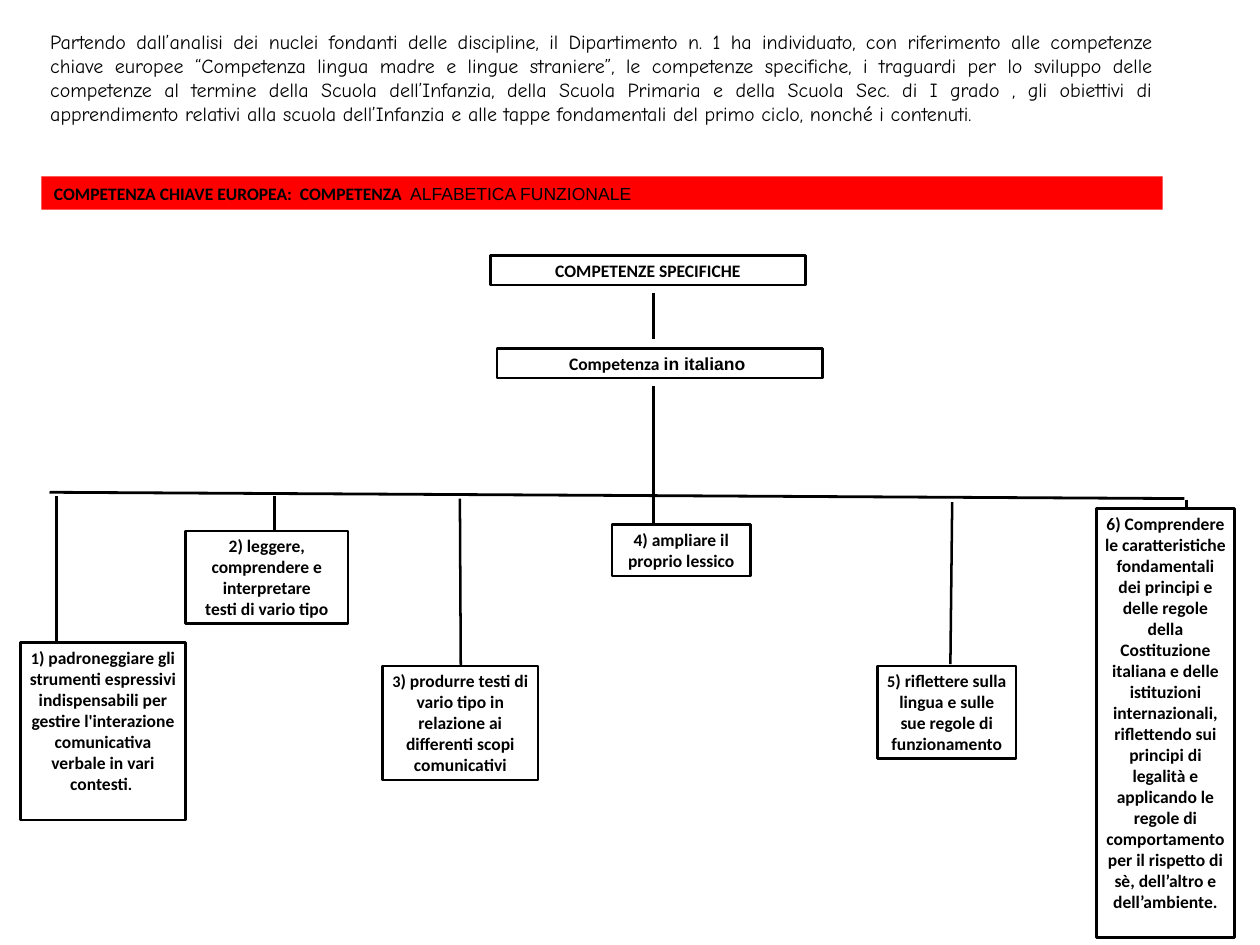
from lxml.etree import SubElement
from pptx import Presentation
from pptx.dml.color import RGBColor
from pptx.enum.shapes import MSO_CONNECTOR as Connector, MSO_SHAPE as Shape
from pptx.enum.text import MSO_ANCHOR as Anchor, PP_ALIGN as Align
from pptx.oxml.ns import qn
from pptx.util import Inches, Pt

BLACK = RGBColor(0, 0, 0)
RED = RGBColor(255, 0, 0)
BODY, ACCENT, INTRO_FONT = "Calibri", "Arial", "Comic Neue"
LEFT, TRUNK = 0.46, 7.26

INTRO = (
    "Partendo dall’analisi dei nuclei fondanti delle discipline, il Dipartimento n. 1 ha "
    "individuato, con riferimento alle competenze chiave europee “Competenza lingua madre e "
    "lingue straniere”, le competenze specifiche, i traguardi per lo sviluppo delle competenze "
    "al termine della Scuola dell’Infanzia, della Scuola Primaria e della Scuola Sec. di I "
    "grado , gli obiettivi di apprendimento relativi alla scuola dell’Infanzia e alle tappe "
    "fondamentali del primo ciclo, nonché i contenuti."
)
HEADINGS = [
    ((5.45, 2.84, 3.5, 0.33), [[("COMPETENZE SPECIFICHE", {})]]),
    ((5.52, 3.87, 3.62, 0.33),
     [[("Competenza ", {}), ("in italiano ", {"name": ACCENT})]]),
]
SMALL = {"size": Pt(13)}
SKILLS = [
    ((0.23, 7.14, 1.83, 1.97), [
        [("1", SMALL), (") padroneggiare gli strumenti espressivi", {})],
        [("indispensabili per gestire l'interazione comunicativa verbale in vari contesti", {}),
         (". ", SMALL)]]),
    ((2.06, 5.9, 1.81, 1.03), [
        [("2) leggere, comprendere e interpretare", {})], [("testi di vario tipo", {})]]),
    ((4.25, 7.4, 1.73, 1.27), [
        [("3", SMALL),
         (") produrre testi di vario tipo in relazione ai differenti scopi comunicativi", {})]]),
    ((6.8, 5.83, 1.54, 0.57), [[("4) ampliare il proprio lessico", {})]]),
    ((9.75, 7.4, 1.54, 1.03), [
        [("5", SMALL),
         (") riflettere sulla lingua e sulle sue regole di funzionamento", {})]]),
]
CITIZENSHIP = (
    "6) Comprendere le caratteristiche fondamentali dei principi e delle regole della "
    "Costituzione italiana e delle istituzioni internazionali, riflettendo sui principi di "
    "legalità e applicando le regole di comportamento per il rispetto di sè, dell’altro e "
    "dell’ambiente."
)
BRANCHES = [
    (0.63, 5.51, 0.63, 7.13),
    (3.05, 5.51, 3.05, 5.9),
    (5.11, 5.54, 5.12, 7.4),
    (TRUNK, 3.25, TRUNK, 3.77),
    (TRUNK, 4.29, TRUNK, 5.82),
    (10.58, 5.58, 10.56, 7.38),
]
THICK_LINES = [(0.55, 5.47, 13.16, 5.54), (13.18, 5.55, 13.18, 5.67)]


def write(frame, paragraphs, align, font=BODY, size=14, bold=True, inset=(0.1, 0.05)):
    """Fill a text frame with paragraphs of (text, font overrides) runs."""
    frame.word_wrap = True
    frame.vertical_anchor = Anchor.TOP
    frame.margin_left = frame.margin_right = Inches(inset[0])
    frame.margin_top = frame.margin_bottom = Inches(inset[1])
    for index, runs in enumerate(paragraphs):
        paragraph = frame.add_paragraph() if index else frame.paragraphs[0]
        paragraph.alignment = align
        paragraph.font.name, paragraph.font.size = font, Pt(size)
        paragraph.font.bold, paragraph.font.color.rgb = bold, BLACK
        for text, overrides in runs:
            run = paragraph.add_run()
            run.text = text
            for attribute, value in overrides.items():
                setattr(run.font, attribute, value)


def add_panel(slide, area, kind=Shape.RECTANGLE):
    """Add a shape without fill, line or shadow."""
    panel = slide.shapes.add_shape(kind, *map(Inches, area))
    panel.shadow.inherit = False
    panel.fill.background()
    panel.line.fill.background()
    return panel


def add_box(slide, area, paragraphs, kind=Shape.RECTANGLE, width=2):
    """Add an outlined box with centred bold text."""
    box = add_panel(slide, area, kind)
    box.line.color.rgb, box.line.width = BLACK, Pt(width)
    write(box.text_frame, paragraphs, Align.CENTER)


def add_line(slide, ends, width=2):
    """Add a straight black line between two points."""
    line = slide.shapes.add_connector(Connector.STRAIGHT, *map(Inches, ends))
    line.line.color.rgb, line.line.width = BLACK, Pt(width)
    SubElement(line._element.spPr, qn("a:effectLst"))


def add_banner(slide):
    """Add the red bar naming the key competence."""
    banner = add_panel(slide, (LEFT, 1.96, 12.46, 0.37))
    banner.fill.solid()
    banner.fill.fore_color.rgb = RED
    label = [("COMPETENZA CHIAVE EUROPEA:  COMPETENZA ", {}),
             (" ALFABETICA FUNZIONALE", {"name": ACCENT, "bold": False})]
    write(banner.text_frame, [label], Align.LEFT, inset=(0.14, 0.07))


def add_intro(slide):
    """Add the justified opening paragraph."""
    intro = slide.shapes.add_textbox(*map(Inches, (LEFT, 0.28, 12.45, 1.43)))
    write(intro.text_frame, [[(INTRO, {})]], Align.JUSTIFY, INTRO_FONT, 16, False)


def main():
    """Build the competence tree and save it."""
    deck = Presentation()
    deck.slide_width, deck.slide_height = Inches(14), Inches(10.5)
    slide = deck.slides.add_slide(deck.slide_layouts[6])
    add_intro(slide)
    add_banner(slide)
    for ends in THICK_LINES:
        add_line(slide, ends, 2.25)
    for ends in BRANCHES:
        add_line(slide, ends)
    for area, paragraphs in HEADINGS + SKILLS:
        add_box(slide, area, paragraphs)
    add_box(slide, (12.18, 5.65, 1.54, 4.77), [[(CITIZENSHIP, {})]],
            Shape.FLOWCHART_PROCESS, 2.25)
    deck.save("out.pptx")


if __name__ == "__main__":
    main()
